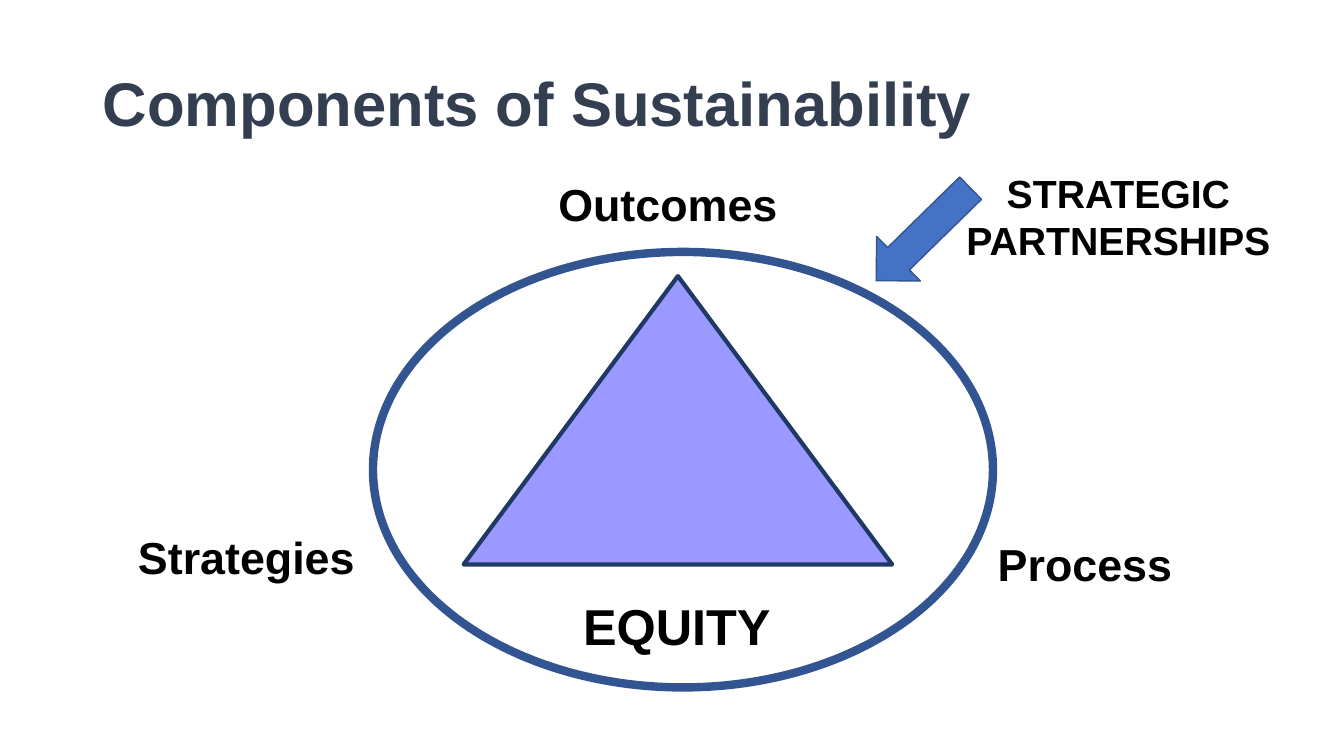
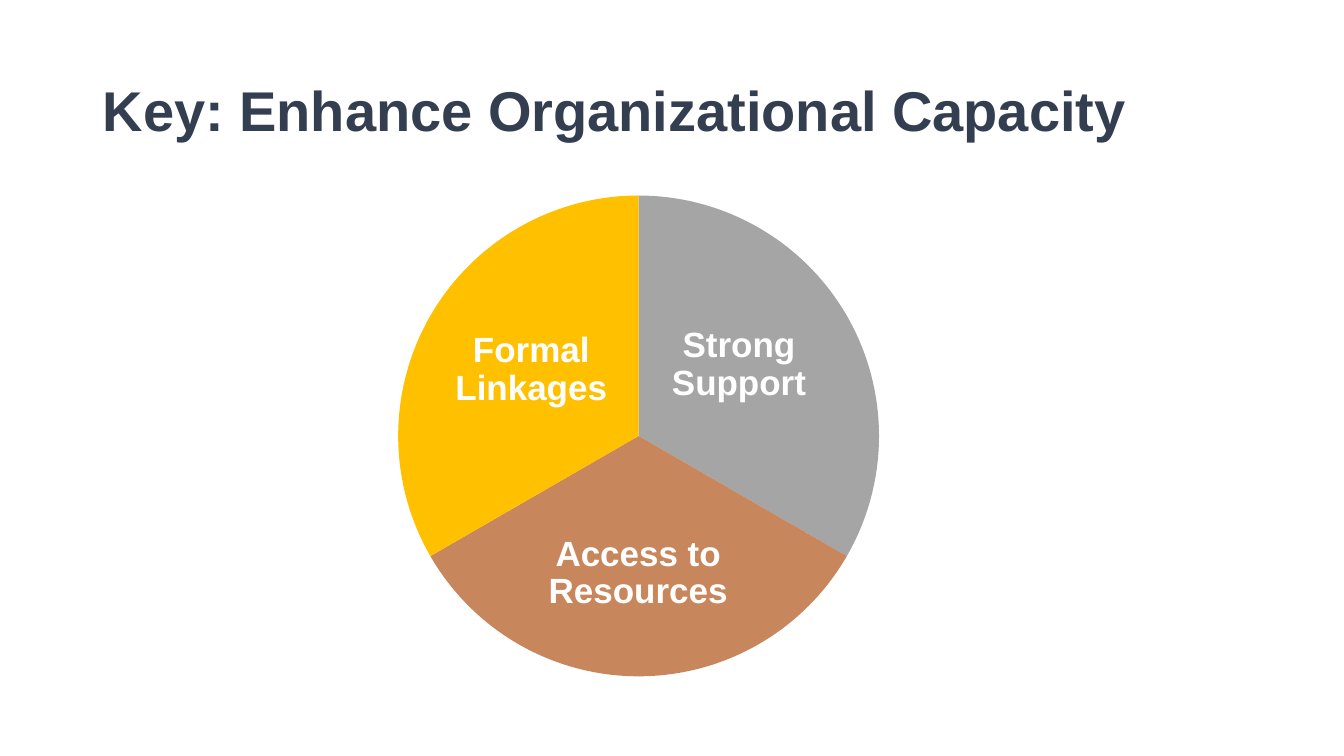
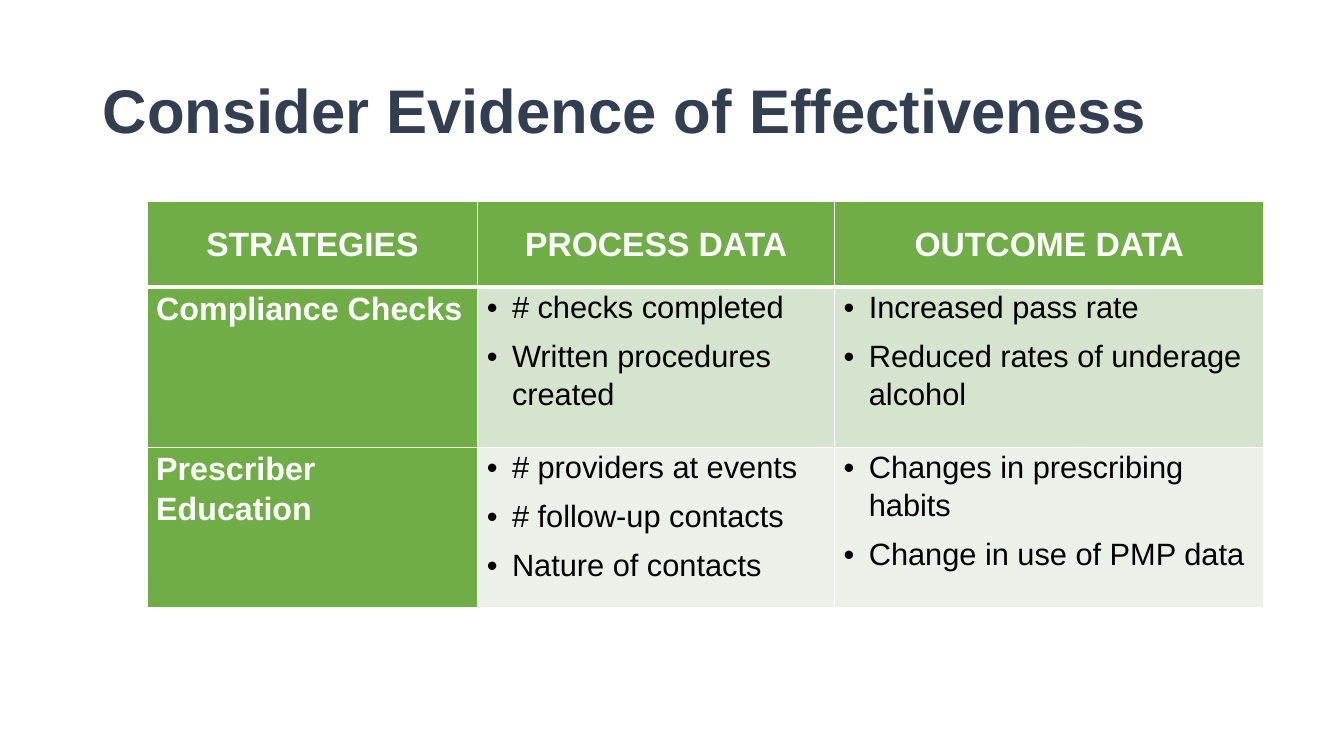
from dataclasses import dataclass
from typing import Any, NamedTuple, Optional

from lxml.etree import SubElement
from pptx import Presentation
from pptx.dml.color import RGBColor
from pptx.enum.shapes import MSO_SHAPE
from pptx.enum.text import MSO_ANCHOR, PP_ALIGN
from pptx.oxml import parse_xml
from pptx.oxml.ns import nsdecls, qn
from pptx.util import Inches, Pt

SLIDE_WIDTH, SLIDE_HEIGHT = Inches(13.33), Inches(7.5)
ADJUSTMENT_PER_DEGREE = 0.6


@dataclass(frozen=True)
class Theme:
    font: str = "Arial"
    title: str = "333F50"
    ink: str = "000000"
    white: str = "FFFFFF"
    outline: str = "325491"
    arrow: str = "4472C4"
    triangle: str = "9999FF"
    triangle_line: str = "203864"
    support: str = "A5A5A5"
    resources: str = "C8865C"
    linkages: str = "FFC000"
    header: str = "70AD47"
    bands: tuple[str, ...] = ("D5E3CF", "EBF1E9")
    title_size: int = 44
    long_title_size: int = 40
    equity_size: int = 36
    corner_size: int = 32
    partner_size: int = 28
    sector_size: int = 25
    header_size: int = 24
    strategy_size: int = 23
    data_size: int = 22


THEME = Theme()


class Box(NamedTuple):
    """A frame in percent of the slide's width and height."""
    left: float
    top: float
    width: float
    height: float

    def frame(self) -> tuple[int, int, int, int]:
        return (across(self.left), down(self.top), across(self.width), down(self.height))


class Label(NamedTuple):
    text: str
    box: Box
    size: int
    align: PP_ALIGN = PP_ALIGN.LEFT


class Figure(NamedTuple):
    kind: MSO_SHAPE
    box: Box
    fill: Optional[str] = None
    line: Optional[str] = None
    line_width: float = 0
    rotation: float = 0
    angles: tuple[int, ...] = ()


class Sector(NamedTuple):
    text: str
    start: int
    color: str
    label_box: Box


class StrategyRow(NamedTuple):
    strategy: str
    process: tuple[str, ...]
    outcome: tuple[str, ...]


CORNERS_AND_PARTNERS = (
    Label("Outcomes", Box(40.8, 22.67, 19.2, 8.53), THEME.corner_size),
    Label("Strategies", Box(9.53, 69.47, 18.23, 8.53), THEME.corner_size),
    Label("Process", Box(73.5, 70.4, 16.28, 8.53), THEME.corner_size),
    Label("STRATEGIC PARTNERSHIPS", Box(69.9, 21.73, 26.63, 13.87), THEME.partner_size,
          PP_ALIGN.CENTER),
    Label("EQUITY", Box(34.43, 78, 31.88, 9.47), THEME.equity_size, PP_ALIGN.CENTER),
)
COMPONENT_FIGURES = (
    Figure(MSO_SHAPE.ISOSCELES_TRIANGLE, Box(34.5, 36.53, 31.88, 38.13),
           THEME.triangle, THEME.triangle_line, 3),
    Figure(MSO_SHAPE.OVAL, Box(27.75, 33.33, 46.13, 57.6), None, THEME.outline, 6),
    Figure(MSO_SHAPE.DOWN_ARROW, Box(66.38, 22.27, 4.65, 17.47),
           THEME.arrow, THEME.outline, 1, 45.6),
)
PIE_BOX = Box(29.63, 25.87, 35.78, 63.6)
SECTORS = (
    Sector("Strong Support", 270, THEME.support, Box(48.83, 37.73, 12.3, 21.2)),
    Sector("Access to Resources", 30, THEME.resources, Box(39.38, 66, 16.2, 19.73)),
    Sector("Formal Linkages", 150, THEME.linkages, Box(33.45, 38.4, 12.15, 21.2)),
)
TABLE_BOX = Box(10.95, 26.67, 83.1, 53.73)
TABLE_COLUMNS = (24.6, 26.55, 31.95)
TABLE_ROWS = (11.33, 21.2, 21.2)
HEADINGS = ("STRATEGIES", "PROCESS DATA", "OUTCOME DATA")
STRATEGY_ROWS = (
    StrategyRow("Compliance Checks",
                ("# checks completed", "Written procedures created"),
                ("Increased pass rate", "Reduced rates of underage alcohol")),
    StrategyRow("Prescriber Education",
                ("# providers at events", "# follow-up contacts", "Nature of contacts"),
                ("Changes in prescribing habits", "Change in use of PMP data")),
)


def across(percent: float) -> int:
    return int(SLIDE_WIDTH * percent / 100)


def down(percent: float) -> int:
    return int(SLIDE_HEIGHT * percent / 100)


def set_all(target: Any, values: dict[str, Any]) -> None:
    for name, value in values.items():
        setattr(target, name, value)


def write(paragraph: Any, text: str, size: int, color: str, bold: bool = True,
          **layout: Any) -> None:
    """Put one run in the paragraph; layout holds paragraph attributes."""
    set_all(paragraph, layout)
    run = paragraph.add_run()
    run.text = text
    set_all(run.font, {"name": THEME.font, "size": Pt(size), "bold": bold})
    run.font.color.rgb = RGBColor.from_string(color)


def add_text(slide: Any, label: Label, color: str, inset: Optional[float] = None,
             anchor: MSO_ANCHOR = MSO_ANCHOR.TOP, line_spacing: float = 1.0) -> None:
    text_frame = slide.shapes.add_textbox(*label.box.frame()).text_frame
    set_all(text_frame, {"word_wrap": True, "vertical_anchor": anchor})
    if inset is not None:
        sides = ("left", "top", "right", "bottom")
        set_all(text_frame, {f"margin_{side}": Inches(inset) for side in sides})
    write(text_frame.paragraphs[0], label.text, label.size, color,
          alignment=label.align, line_spacing=line_spacing)


def add_titled_slide(presentation: Any, title: str, size: int = THEME.title_size,
                     top: float = 5.33) -> Any:
    slide = presentation.slides.add_slide(presentation.slide_layouts[6])
    add_text(slide, Label(title, Box(6.9, top, 86.25, 19.33), size), THEME.title,
             anchor=MSO_ANCHOR.MIDDLE, line_spacing=0.9)
    return slide


def add_figure(slide: Any, figure: Figure) -> None:
    shape = slide.shapes.add_shape(figure.kind, *figure.box.frame())
    shape.shadow.inherit = False
    shape.rotation = figure.rotation
    for index, angle in enumerate(figure.angles):
        shape.adjustments[index] = angle * ADJUSTMENT_PER_DEGREE
    if figure.fill:
        shape.fill.solid()
        shape.fill.fore_color.rgb = RGBColor.from_string(figure.fill)
    else:
        shape.fill.background()
    if figure.line:
        shape.line.color.rgb = RGBColor.from_string(figure.line)
        shape.line.width = Pt(figure.line_width)
    else:
        shape.line.fill.background()


def style_cell(cell: Any, fill: str, top: float, bottom: float) -> None:
    """Fill the cell and rule it in white; top and bottom are line widths."""
    set_all(cell, {"margin_left": Inches(0.09), "margin_right": Inches(0.09),
                   "margin_top": 0, "margin_bottom": 0})
    cell.fill.solid()
    cell.fill.fore_color.rgb = RGBColor.from_string(fill)
    properties = cell._tc.get_or_add_tcPr()
    for index, (side, width) in enumerate(zip("LRTB", (1, 1, top, bottom))):
        properties.insert(index, parse_xml(
            f'<a:ln{side} {nsdecls("a")} w="{Pt(width)}"><a:solidFill>'
            f'<a:srgbClr val="{THEME.white}"/></a:solidFill></a:ln{side}>'))


def add_bullet(paragraph: Any) -> None:
    properties = paragraph._p.get_or_add_pPr()
    properties.set("marL", str(Inches(0.25)))
    properties.set("indent", str(-Inches(0.25)))
    SubElement(properties, qn("a:buFont")).set("typeface", THEME.font)
    SubElement(properties, qn("a:buChar")).set("char", "•")


def write_bullets(cell: Any, items: tuple[str, ...]) -> None:
    for index, item in enumerate(items):
        paragraphs = cell.text_frame
        paragraph = paragraphs.add_paragraph() if index else paragraphs.paragraphs[0]
        add_bullet(paragraph)
        write(paragraph, item, THEME.data_size, THEME.ink, bold=False, line_spacing=1.1,
              space_before=Pt(4 if index else 0), space_after=Pt(4))


def add_strategy_table(slide: Any) -> None:
    table = slide.shapes.add_table(len(TABLE_ROWS), len(TABLE_COLUMNS),
                                   *TABLE_BOX.frame()).table
    set_all(table, {"first_row": False, "horz_banding": False})
    for column, width in zip(table.columns, TABLE_COLUMNS):
        column.width = across(width)
    for row, height in zip(table.rows, TABLE_ROWS):
        row.height = down(height)
    for column_index, heading in enumerate(HEADINGS):
        cell = table.cell(0, column_index)
        style_cell(cell, THEME.header, top=1, bottom=3)
        cell.vertical_anchor = MSO_ANCHOR.MIDDLE
        write(cell.text_frame.paragraphs[0], heading, THEME.header_size, THEME.white,
              alignment=PP_ALIGN.CENTER)
    for row_index, (entry, band) in enumerate(zip(STRATEGY_ROWS, THEME.bands), start=1):
        cells = [table.cell(row_index, index) for index in range(len(TABLE_COLUMNS))]
        for cell, fill in zip(cells, (THEME.header, band, band)):
            style_cell(cell, fill, top=3 if row_index == 1 else 1, bottom=1)
        write(cells[0].text_frame.paragraphs[0], entry.strategy, THEME.strategy_size,
              THEME.white, line_spacing=1.1, space_after=Pt(4))
        write_bullets(cells[1], entry.process)
        write_bullets(cells[2], entry.outcome)


def build_components(presentation: Any) -> None:
    slide = add_titled_slide(presentation, "Components of Sustainability", top=4.4)
    for figure in COMPONENT_FIGURES:
        add_figure(slide, figure)
    for label in CORNERS_AND_PARTNERS:
        add_text(slide, label, THEME.ink)


def build_capacity(presentation: Any) -> None:
    slide = add_titled_slide(presentation, "Key: Enhance Organizational Capacity",
                             THEME.long_title_size)
    sweep = 360 // len(SECTORS)
    for sector in SECTORS:
        angles = (sector.start, (sector.start + sweep) % 360)
        add_figure(slide, Figure(MSO_SHAPE.PIE, PIE_BOX, sector.color, angles=angles))
        label = Label(sector.text, sector.label_box, THEME.sector_size, PP_ALIGN.CENTER)
        add_text(slide, label, THEME.white, inset=0.03, anchor=MSO_ANCHOR.MIDDLE,
                 line_spacing=0.9)


def build_evidence(presentation: Any) -> None:
    slide = add_titled_slide(presentation, "Consider Evidence of Effectiveness")
    add_strategy_table(slide)


def main() -> None:
    presentation = Presentation()
    set_all(presentation, {"slide_width": SLIDE_WIDTH, "slide_height": SLIDE_HEIGHT})
    for build in (build_components, build_capacity, build_evidence):
        build(presentation)
    presentation.save("out.pptx")


if __name__ == "__main__":
    main()
